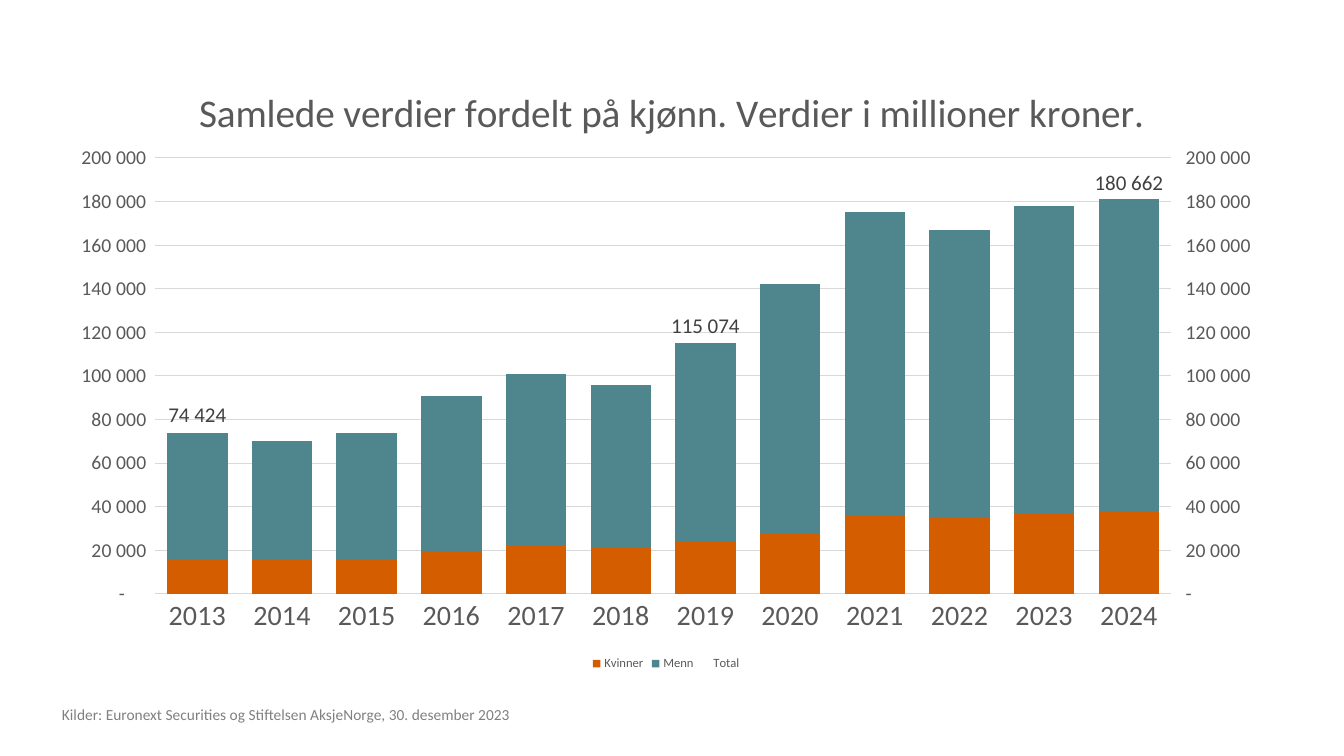
from copy import deepcopy
from typing import NamedTuple

from lxml import etree
from pptx import Presentation
from pptx import util as u
from pptx.chart.data import CategoryChartData
from pptx.dml.color import RGBColor
from pptx.enum import chart as charts
from pptx.enum import text
from pptx.oxml import parse_xml
from pptx.oxml.ns import nsdecls, qn

EMU_PER_PX = 914400 / 100.8
FONT = "Calibri"
BLACK = RGBColor(0x00, 0x00, 0x00)
LABEL_GREY = RGBColor(0x40, 0x40, 0x40)
TEXT_GREY = RGBColor(0x59, 0x59, 0x59)
SOURCE_GREY = RGBColor(0x80, 0x80, 0x80)
GRID_GREY = RGBColor(0xD9, 0xD9, 0xD9)
ORANGE = RGBColor(0xD4, 0x5D, 0x00)
TEAL = RGBColor(0x4F, 0x86, 0x8E)

AXIS_FORMAT = r'_-* #\ ##0_-;\-* #\ ##0_-;_-* "-"??_-;_-'
TOTAL_FORMAT = r"#\ ##0"
YEARS = [str(year) for year in range(2013, 2025)]
LABELLED_YEARS = ("2013", "2019", "2024")
SECOND_CATEGORY_ID, SECOND_VALUE_ID = "50010", "50020"


class Box(NamedTuple):
    left: int
    top: int
    width: int
    height: int


class Series(NamedTuple):
    name: str
    values: list[int]
    color: RGBColor


CHART_BOX = Box(52, 58, 1228, 617)
PLOT_BOX = Box(155, 158, 1016, 436)
TITLE_BOX = Box(192, 79, 948, 50)
SOURCE_BOX = Box(52, 700, 488, 29)

GENDERS = [
    Series("Kvinner", [16000, 16000, 16000, 19000, 22000, 21000,
                       24000, 28000, 36000, 35000, 37000, 38000], ORANGE),
    Series("Menn", [58000, 54000, 58000, 72000, 79000, 75000,
                    91000, 114000, 139000, 132000, 141000, 143000], TEAL),
]
TOTALS = [74424, 69757, 73695, 91253, 100829, 95895,
          115074, 141678, 174351, 166811, 178280, 180662]


def emu(box: Box) -> list[int]:
    return [round(length * EMU_PER_PX) for length in box]


def set_all(target, values: dict) -> None:
    for name, value in values.items():
        setattr(target, name, value)


def set_font(font, size: float, color: RGBColor) -> None:
    set_all(font, {"name": FONT, "size": u.Pt(size), "bold": False})
    font.color.rgb = color


def set_line(line, color: RGBColor) -> None:
    line.color.rgb = color
    line.width = u.Pt(0.75)


def place(element, index: int, box: Box, is_plot: bool) -> None:
    """Fix a chart part at a slide position given in px."""
    for layout in element.findall(qn("c:layout")):
        element.remove(layout)
    values = {"xMode": "edge", "yMode": "edge",
              "x": (box.left - CHART_BOX.left) / CHART_BOX.width,
              "y": (box.top - CHART_BOX.top) / CHART_BOX.height}
    if is_plot:
        values = {"layoutTarget": "inner", **values,
                  "w": box.width / CHART_BOX.width,
                  "h": box.height / CHART_BOX.height}
    layout = parse_xml(f"<c:layout {nsdecls('c')}><c:manualLayout/></c:layout>")
    for name, value in values.items():
        etree.SubElement(layout[0], qn(f"c:{name}")).set("val", str(value))
    element.insert(index, layout)


def format_axes(chart) -> None:
    category, value = chart.category_axis, chart.value_axis
    for axis, size in ((category, 20), (value, 14)):
        set_all(axis, {"major_tick_mark": charts.XL_TICK_MARK.NONE,
                       "minor_tick_mark": charts.XL_TICK_MARK.NONE})
        set_font(axis.tick_labels.font, size, TEXT_GREY)
    set_line(category.format.line, GRID_GREY)
    set_all(value, {"minimum_scale": 0, "maximum_scale": 200000,
                    "major_unit": 20000, "has_major_gridlines": True})
    set_line(value.major_gridlines.format.line, GRID_GREY)
    value.format.line.fill.background()
    set_all(value.tick_labels, {"number_format": AXIS_FORMAT,
                                "number_format_is_linked": False})


def move_totals_to_right_axis(chart) -> None:
    """Turn the last series into a line plot with its own pair of axes."""
    plot_area = chart.element.xpath(".//c:plotArea")[0]
    bars, left_category, left_value = (
        plot_area.find(qn(f"c:{name}")) for name in ("barChart", "catAx", "valAx"))
    totals = bars.findall(qn("c:ser"))[-1]
    for inverted in totals.findall(qn("c:invertIfNegative")):
        totals.remove(inverted)
    line_plot = parse_xml(
        f'<c:lineChart {nsdecls("c")}><c:grouping val="standard"/>'
        f'<c:varyColors val="0"/><c:marker val="1"/>'
        f'<c:axId val="{SECOND_CATEGORY_ID}"/><c:axId val="{SECOND_VALUE_ID}"/>'
        f'</c:lineChart>')
    line_plot.insert(2, totals)
    bars.addnext(line_plot)

    category, value = deepcopy(left_category), deepcopy(left_value)
    value.remove(value.find(qn("c:majorGridlines")))
    changes = (
        (category, {"axId": SECOND_CATEGORY_ID, "crossAx": SECOND_VALUE_ID,
                    "delete": "1"}),
        (value, {"axId": SECOND_VALUE_ID, "crossAx": SECOND_CATEGORY_ID,
                 "axPos": "r", "crosses": "max", "majorTickMark": "out"}),
    )
    left_value.addnext(value)
    value.addnext(category)
    for axis, settings in changes:
        for name, setting in settings.items():
            axis.find(qn(f"c:{name}")).set("val", setting)


def format_totals(series) -> None:
    series.smooth = False
    series.format.line.fill.background()
    series.marker.style = charts.XL_MARKER_STYLE.NONE
    set_all(series.data_labels, {"show_value": False,
                                 "number_format": TOTAL_FORMAT,
                                 "number_format_is_linked": False})
    for year in LABELLED_YEARS:
        label = series.points[YEARS.index(year)].data_label
        set_font(label.font, 15, LABEL_GREY)
        label.position = charts.XL_LABEL_POSITION.ABOVE


def add_values_chart(slide) -> None:
    data = CategoryChartData()
    data.categories = YEARS
    for gender in GENDERS:
        data.add_series(gender.name, gender.values)
    data.add_series("Total", TOTALS, TOTAL_FORMAT)
    chart = slide.shapes.add_chart(
        charts.XL_CHART_TYPE.COLUMN_STACKED, *emu(CHART_BOX), data).chart
    set_font(chart.font, 10, BLACK)

    format_axes(chart)
    move_totals_to_right_axis(chart)
    columns, line = chart.plots
    set_all(columns, {"gap_width": 40, "overlap": 100, "vary_by_categories": False})
    for series, gender in zip(columns.series, GENDERS):
        series.format.fill.solid()
        series.format.fill.fore_color.rgb = gender.color
    format_totals(line.series[0])

    set_all(chart, {"has_title": True, "has_legend": True})
    paragraph = chart.chart_title.text_frame.paragraphs[0]
    run = paragraph.add_run()
    run.text = "Samlede verdier fordelt på kjønn. Verdier i millioner kroner."
    set_font(run.font, 28, TEXT_GREY)
    title, plot_area = (chart.element.xpath(f"c:chart/c:{name}")[0]
                        for name in ("title", "plotArea"))
    place(title, 1, TITLE_BOX, is_plot=False)
    place(plot_area, 0, PLOT_BOX, is_plot=True)
    set_all(chart.legend, {"position": charts.XL_LEGEND_POSITION.BOTTOM,
                           "include_in_layout": False})
    set_font(chart.legend.font, 9, TEXT_GREY)


def add_source(slide) -> None:
    frame = slide.shapes.add_textbox(*emu(SOURCE_BOX)).text_frame
    set_all(frame, {"word_wrap": True,
                    "auto_size": text.MSO_AUTO_SIZE.SHAPE_TO_FIT_TEXT})
    run = frame.paragraphs[0].add_run()
    run.text = "Kilder: Euronext Securities og Stiftelsen AksjeNorge, 30. desember 2023"
    set_font(run.font, 11, SOURCE_GREY)


def main() -> None:
    presentation = Presentation()
    set_all(presentation, {"slide_width": u.Inches(13.33),
                           "slide_height": u.Inches(7.5)})
    slide = presentation.slides.add_slide(
        presentation.slide_layouts.get_by_name("Blank"))
    add_source(slide)
    add_values_chart(slide)
    presentation.save("out.pptx")


if __name__ == "__main__":
    main()
